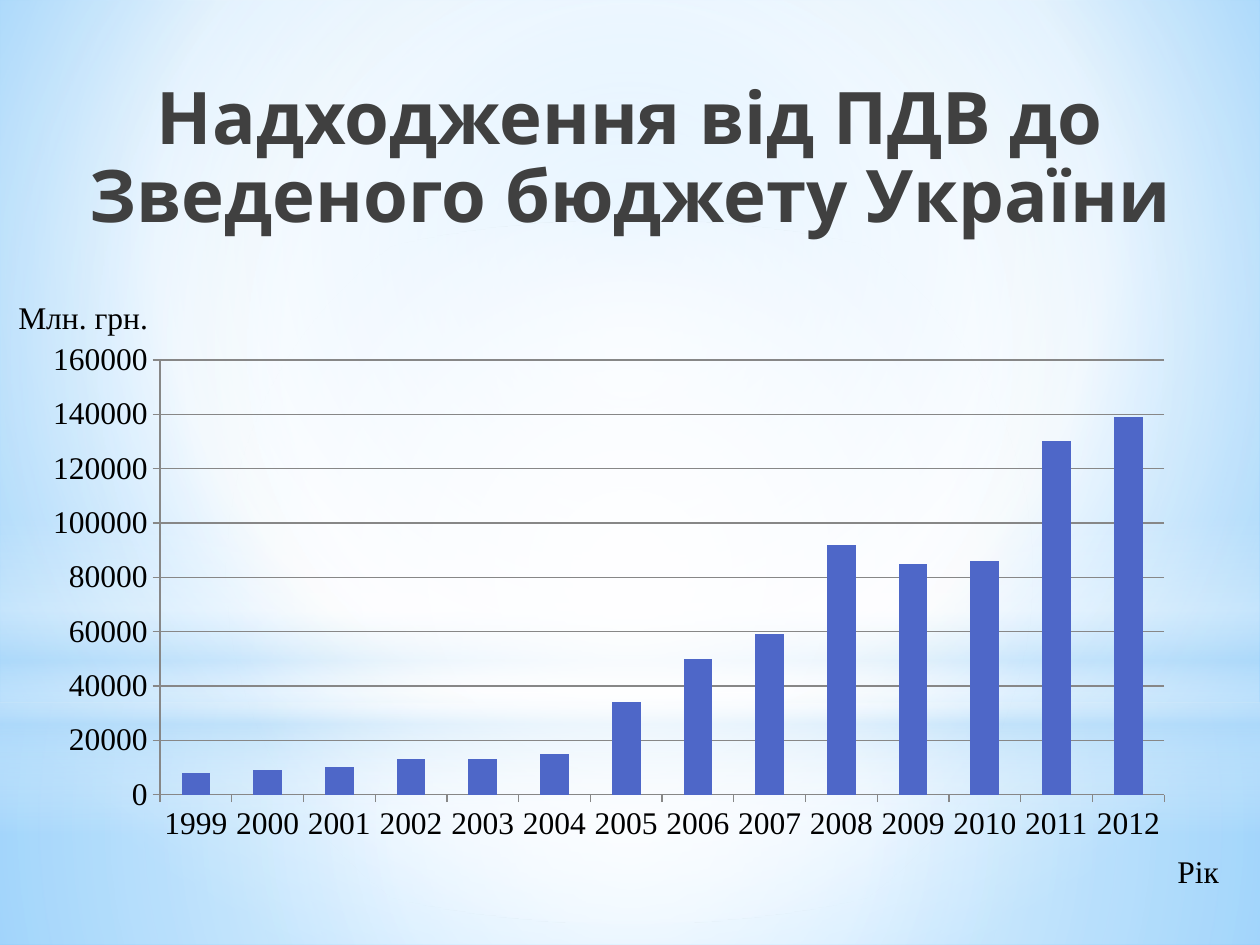
from lxml import etree
from pptx import Presentation
from pptx.chart.data import CategoryChartData
from pptx.dml.color import RGBColor
from pptx.enum.chart import XL_CHART_TYPE, XL_TICK_MARK
from pptx.enum.shapes import MSO_SHAPE
from pptx.enum.text import MSO_ANCHOR, PP_ALIGN
from pptx.oxml.ns import qn
from pptx.util import Cm, Pt

COLUMNS = XL_CHART_TYPE.COLUMN_CLUSTERED
TICK_OUT, TICK_NONE = XL_TICK_MARK.OUTSIDE, XL_TICK_MARK.NONE
RECTANGLE, OVAL = MSO_SHAPE.RECTANGLE, MSO_SHAPE.OVAL
TOP, CENTER = MSO_ANCHOR.TOP, PP_ALIGN.CENTER

WIDTH, HEIGHT = 25.4, 19.05
TITLE_FONT, CHART_FONT = "Karla", "Times New Roman"
COLORS = {
    "white": "FFFFFF",
    "sky": "B4DCFA",
    "inner": "9ED5FF",
    "outer": "5BB9FF",
    "title": "404040",
    "black": "000000",
    "bar": "4E67C8",
    "axis": "878787",
}
MIDDLE = (50, 50, 50, 50)
REVENUE = {
    "1999": 8000, "2000": 9000, "2001": 10000, "2002": 13000, "2003": 13000,
    "2004": 15000, "2005": 34000, "2006": 50000, "2007": 59000, "2008": 92000,
    "2009": 85000, "2010": 86000, "2011": 130000, "2012": 139000,
}


def color(name):
    return RGBColor.from_string(COLORS[name])


def set_gradient(fill, owner, stops, focus=None):
    """Stops are (position, colour, opacity); without a focus it runs downwards."""
    fill.gradient()
    gradient = next(owner.element.iter(qn("a:gradFill")))
    for child in list(gradient):
        gradient.remove(child)
    stop_list = etree.SubElement(gradient, qn("a:gsLst"))
    for position, name, opacity in stops:
        stop = etree.SubElement(stop_list, qn("a:gs"), pos=str(position * 1000))
        rgb = etree.SubElement(stop, qn("a:srgbClr"), val=COLORS[name])
        if opacity < 100:
            etree.SubElement(rgb, qn("a:alpha"), val=str(opacity * 1000))
    if focus:
        circle = etree.SubElement(gradient, qn("a:path"), path="circle")
        sides = {side: str(value * 1000) for side, value in zip("ltrb", focus)}
        etree.SubElement(circle, qn("a:fillToRect"), **sides)
    else:
        etree.SubElement(gradient, qn("a:lin"), ang="5400000", scaled="0")


def add_glow(slide, kind, top, height, stops, focus=None):
    glow = slide.shapes.add_shape(kind, 0, Cm(top), Cm(WIDTH), Cm(height))
    glow.shadow.inherit = False
    glow.line.fill.background()
    set_gradient(glow.fill, glow, stops, focus)


def add_backdrop(slide):
    set_gradient(slide.background.fill, slide,
                 [(0, "inner", 100), (60, "white", 100), (100, "outer", 100)],
                 (20, 10, 20, 60))
    add_glow(slide, RECTANGLE, 14.17, 4.88,
             [(0, "white", 91), (37, "white", 76), (100, "sky", 79)], MIDDLE)
    add_glow(slide, RECTANGLE, 0, 14.17,
             [(0, "white", 89), (48, "white", 62), (100, "sky", 79)], MIDDLE)
    add_glow(slide, RECTANGLE, 10.46, 6.35,
             [(0, "white", 0), (29, "white", 30), (45, "sky", 40),
              (55, "white", 26), (65, "sky", 60), (100, "white", 0)])
    add_glow(slide, OVAL, 4.45, 14.17,
             [(0, "white", 100), (56, "white", 0)], MIDDLE)


def format_font(font, size, name=CHART_FONT, fill="black", bold=False):
    font.name, font.size, font.bold = name, Pt(size), bold
    font.color.rgb = color(fill)


def write_text(frame, text, align=None, spacing=None, **font_format):
    paragraph = frame.paragraphs[0]
    paragraph.alignment = align
    paragraph.line_spacing = spacing
    run = paragraph.add_run()
    run.text = text
    format_font(run.font, **font_format)


def add_title(slide, text):
    box = slide.shapes.add_textbox(0, Cm(1.52), Cm(WIDTH), Cm(3.18))
    box.text_frame.word_wrap = True
    box.text_frame.vertical_anchor = TOP
    write_text(box.text_frame, text, align=CENTER, spacing=0.9,
               size=41.4, name=TITLE_FONT, fill="title", bold=True)


def place(element, index, **values):
    """Give a chart part a manual layout, in fractions of the chart."""
    for old in element.findall(qn("c:layout")):
        element.remove(old)
    layout = etree.Element(qn("c:layout"))
    manual = etree.SubElement(layout, qn("c:manualLayout"))
    if "w" in values:
        etree.SubElement(manual, qn("c:layoutTarget"), val="inner")
    for side in "xy":
        etree.SubElement(manual, qn(f"c:{side}Mode"), val="edge")
    for key, value in values.items():
        etree.SubElement(manual, qn(f"c:{key}"), val=str(value))
    element.insert(index, layout)


def format_axis(axis, title, x, y):
    axis.major_tick_mark, axis.minor_tick_mark = TICK_OUT, TICK_NONE
    axis.format.line.color.rgb = color("axis")
    format_font(axis.tick_labels.font, 18)
    write_text(axis.axis_title.text_frame, title, size=18)
    heading = axis.axis_title.element
    body = next(heading.iter(qn("a:bodyPr")))
    body.set("rot", "0")
    body.set("vert", "horz")
    place(heading, 1, x=x, y=y)


def add_revenue_chart(slide):
    data = CategoryChartData(number_format="0")
    data.categories = list(REVENUE)
    data.add_series("Series 1", list(REVENUE.values()))
    chart = slide.shapes.add_chart(
        COLUMNS, 0, Cm(5.77), Cm(WIDTH), Cm(13.28), data).chart
    chart.has_legend = chart.has_title = False
    format_font(chart.font, 10, TITLE_FONT)

    plot = chart.plots[0]
    plot.gap_width = 150
    plot.vary_by_categories = False
    bars = plot.series[0].format.fill
    bars.solid()
    bars.fore_color.rgb = color("bar")

    format_axis(chart.category_axis, "Рік", 0.93, 0.85)
    amounts = chart.value_axis
    format_axis(amounts, "Млн. грн.", 0.01, 0.01)
    amounts.minimum_scale, amounts.maximum_scale = 0, 160000
    amounts.major_unit = 20000
    amounts.has_major_gridlines = True
    amounts.major_gridlines.format.line.color.rgb = color("axis")
    amounts.tick_labels.number_format = "0"
    amounts.tick_labels.number_format_is_linked = False
    plot_area = next(chart.element.iter(qn("c:plotArea")))
    place(plot_area, 0, x=0.127, y=0.112, w=0.797, h=0.66)


def main():
    deck = Presentation()
    deck.slide_width, deck.slide_height = Cm(WIDTH), Cm(HEIGHT)
    slide = deck.slides.add_slide(deck.slide_layouts[6])
    add_backdrop(slide)
    add_title(slide, "Надходження від ПДВ до Зведеного бюджету України")
    add_revenue_chart(slide)
    deck.save("out.pptx")


if __name__ == "__main__":
    main()
